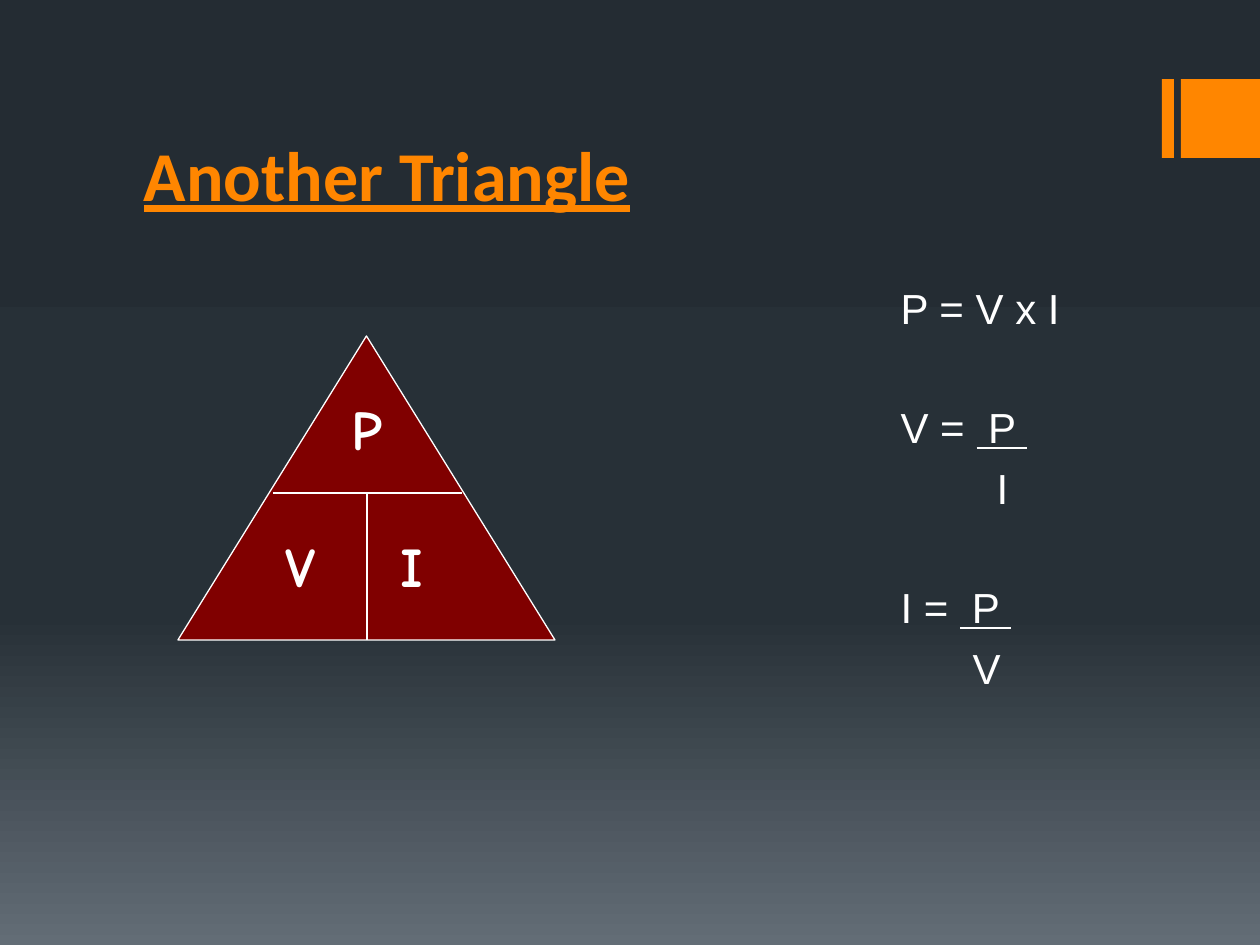
from lxml.etree import SubElement
from pptx import Presentation
from pptx.dml.color import RGBColor
from pptx.enum.shapes import MSO_CONNECTOR, MSO_SHAPE
from pptx.enum.text import MSO_ANCHOR, MSO_AUTO_SIZE, PP_ALIGN
from pptx.oxml.ns import qn
from pptx.util import Emu, Pt

COLORS = {"accent": "FF8600", "text": "FFFFFF", "triangle": "800000"}
BACKGROUND = {0: "242C33", 65: "273037", 100: "636D76"}
FORMULAS = [
    # text, underlined numerator, left indent, space before
    ("P = V x I", "", 6, 0),
    ("V = ", " P ", 6, 39.4),
    ("I", "", 102, 5.9),
    ("I = ", " P ", 6, 39.4),
    ("V", "", 78, 5.9),
]


def px(length):
    """Turn pixels into EMU."""
    return Emu(round(length * 914400 / 126))


def color(name):
    """Look up a named colour."""
    return RGBColor.from_string(COLORS[name])


def place(shape, left, top, width, height):
    """Move and size a shape."""
    shape.left, shape.top = px(left), px(top)
    shape.width, shape.height = px(width), px(height)


def style_font(font, name, size, color_name, bold=False):
    """Set the face, size, colour and weight of a font."""
    font.name, font.size, font.bold = name, Pt(size), bold
    font.color.rgb = color(color_name)


def paint_background(slide):
    """Fill the background with a vertical three-stop gradient."""
    fill = slide.background.fill
    fill.gradient()
    fill.gradient_angle = 270
    stops = slide.background._cSld.find(".//" + qn("a:gsLst"))
    stops.clear()
    for position, value in BACKGROUND.items():
        stop = SubElement(stops, qn("a:gs"), pos=str(position * 1000))
        SubElement(stop, qn("a:srgbClr"), val=value)


def add_filled_shape(slide, kind, box, fill, line=None):
    """Add a preset shape with a solid fill and an optional outline."""
    shape = slide.shapes.add_shape(kind, *map(px, box))
    shape.shadow.inherit = False
    shape.fill.solid()
    shape.fill.fore_color.rgb = color(fill)
    if line:
        shape.line.color.rgb = color(line)
        shape.line.width = Pt(0.75)
    else:
        shape.line.fill.background()


def add_divider(slide, *ends):
    """Add a thin straight line."""
    connector = slide.shapes.add_connector(MSO_CONNECTOR.STRAIGHT, *map(px, ends))
    connector.line.color.rgb = color("text")
    connector.line.width = Pt(0.75)
    SubElement(connector._element.spPr, qn("a:effectLst"))


def add_label(slide, text, box, wrap=False, alignment=PP_ALIGN.LEFT):
    """Add a letter inside the triangle."""
    frame = slide.shapes.add_textbox(*map(px, box)).text_frame
    frame.word_wrap = wrap
    frame.auto_size = MSO_AUTO_SIZE.SHAPE_TO_FIT_TEXT
    paragraph = frame.paragraphs[0]
    paragraph.text = text
    paragraph.alignment = alignment
    style_font(paragraph.font, "Comic Neue", 32, "text", bold=True)


def fill_title(title, text):
    """Place and format the title."""
    place(title, 116, 63, 1008, 159)
    frame = title.text_frame
    frame.auto_size = MSO_AUTO_SIZE.NONE
    frame.vertical_anchor = MSO_ANCHOR.BOTTOM
    frame.margin_left = px(28)
    paragraph = frame.paragraphs[0]
    paragraph.text = text
    paragraph.alignment = PP_ALIGN.LEFT
    style_font(paragraph.font, "Calibri", 40, "accent", bold=True)
    paragraph.font.underline = True


def fill_formulas(body):
    """Place the body and write the formulas with underlined numerators."""
    place(body, 882, 220, 378, 624)
    frame = body.text_frame
    frame.auto_size = MSO_AUTO_SIZE.NONE
    frame.margin_top = px(62)
    for index, (text, numerator, indent, space) in enumerate(FORMULAS):
        paragraph = frame.add_paragraph() if index else frame.paragraphs[0]
        paragraph.add_run().text = text
        if numerator:
            run = paragraph.add_run()
            run.text = numerator
            run.font.underline = True
        paragraph.space_before = Pt(space)
        style_font(paragraph.font, "Arial", 24, "text")
        properties = paragraph._p.get_or_add_pPr()
        properties.set("marL", str(px(indent)))
        properties.set("indent", "0")
        properties.insert_element_before(
            properties.makeelement(qn("a:buNone")), "a:tabLst", "a:defRPr", "a:extLst")


def main():
    """Build the slide and save it."""
    presentation = Presentation()
    presentation.slide_width, presentation.slide_height = px(1260), px(945)
    slide = presentation.slides.add_slide(presentation.slide_layouts[1])
    paint_background(slide)
    for left, width in ((1162, 12), (1181, 79)):
        add_filled_shape(slide, MSO_SHAPE.RECTANGLE, (left, 79, width, 79), "accent")
    fill_title(slide.shapes.title, "Another Triangle")
    fill_formulas(slide.placeholders[1])
    add_filled_shape(slide, MSO_SHAPE.ISOSCELES_TRIANGLE, (178, 336, 377, 304),
                     "triangle", "text")
    add_divider(slide, 273, 493, 462, 493)
    add_divider(slide, 367, 640, 367, 493)
    add_label(slide, "P", (325, 388, 84, 79), True, PP_ALIGN.CENTER)
    add_label(slide, "V", (273, 525, 63, 79))
    add_label(slide, "I", (388, 525, 55, 79))
    presentation.save("out.pptx")


if __name__ == "__main__":
    main()
